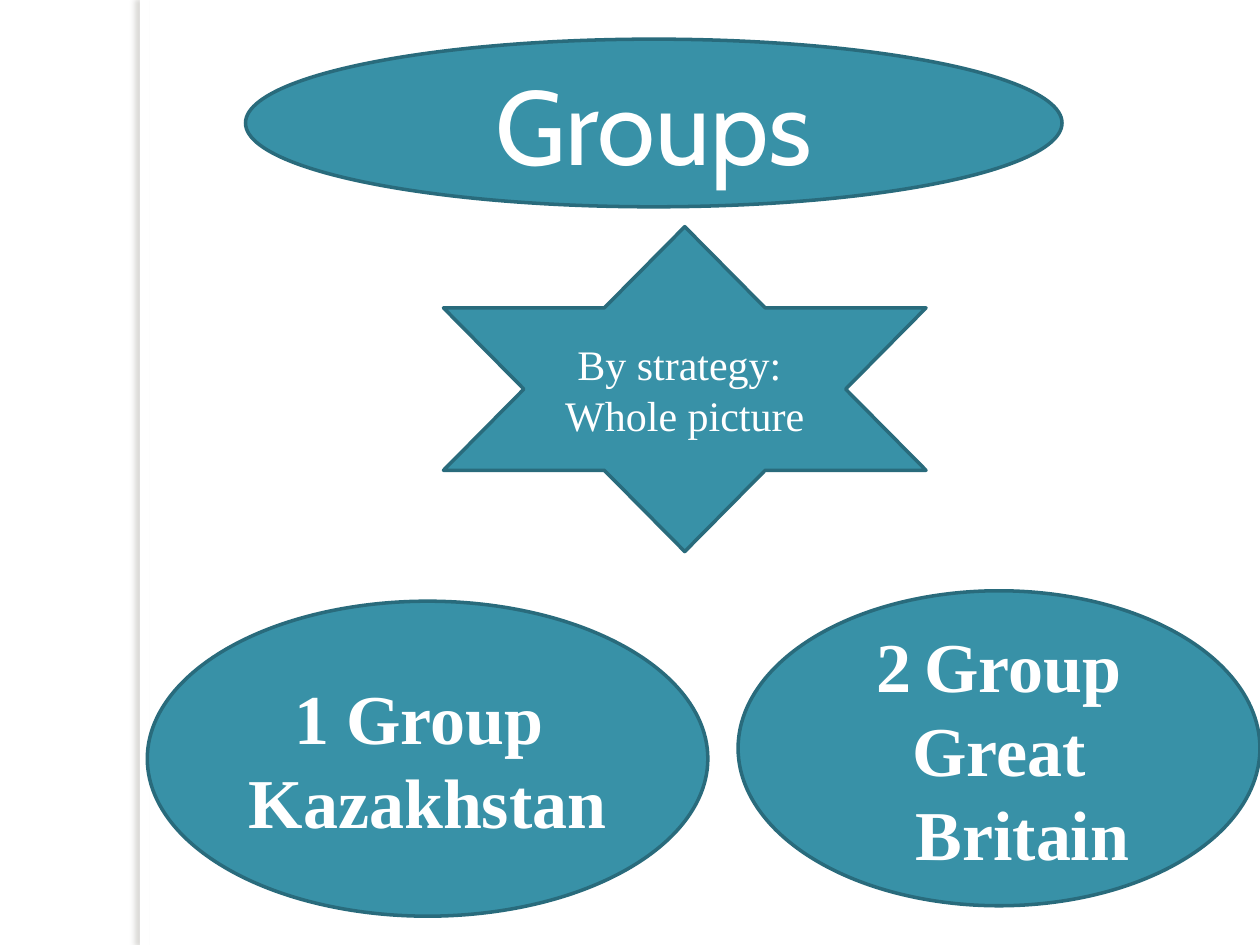
"""Build a slide that splits a class into two groups."""
from dataclasses import dataclass

from lxml.etree import SubElement
from pptx import Presentation
from pptx.dml.color import RGBColor
from pptx.enum.shapes import MSO_SHAPE
from pptx.enum.text import MSO_ANCHOR, MSO_AUTO_SIZE, PP_ALIGN
from pptx.oxml.ns import qn
from pptx.slide import Slide
from pptx.util import Cm, Pt

WHITE = RGBColor(0xFF, 0xFF, 0xFF)
TEAL = RGBColor(0x38, 0x91, 0xA7)
EDGE = RGBColor(0x29, 0x6B, 0x7C)
SHADE = RGBColor(0x73, 0x6F, 0x63)
SERIF = "Times New Roman"
OVAL = MSO_SHAPE.OVAL


@dataclass
class Box:
    left: float
    top: float
    width: float
    height: float

    def place(self) -> tuple:
        return Cm(self.left), Cm(self.top), Cm(self.width), Cm(self.height)


@dataclass
class Label:
    kind: MSO_SHAPE
    box: Box
    lines: list[str]
    size: int
    bold: bool = False
    start: int = 0


TITLE = Box(4.95, 0.79, 16.46, 3.38)
LABELS = [
    Label(OVAL, Box(2.97, 12.12, 11.3, 6.35), ["1 Group ", "Kazakhstan"], 40, True),
    Label(OVAL, Box(14.88, 11.91, 10.52, 6.35), ["Group", "Great Britain"], 40, True, 2),
    Label(MSO_SHAPE.STAR_6_POINT, Box(8.94, 4.57, 9.73, 6.55),
          ["By strategy: ", "Whole picture"], 24),
]


def write(shape, lines: list[str], *, size: int, font: str = SERIF,
          bold: bool = False, start: int = 0) -> None:
    frame = shape.text_frame
    frame.word_wrap = True
    frame.auto_size = MSO_AUTO_SIZE.NONE
    frame.vertical_anchor = MSO_ANCHOR.MIDDLE
    frame.text = "\n".join(lines)
    for para in frame.paragraphs:
        para.alignment = PP_ALIGN.CENTER
        style = para.runs[0].font
        style.name, style.size, style.bold = font, Pt(size), bold
        style.color.rgb = WHITE
        if start:
            props = para._p.get_or_add_pPr()
            props.set("marL", str(Cm(0.95)))
            props.set("indent", str(Cm(-0.95)))
    if start:
        SubElement(frame.paragraphs[0]._p.get_or_add_pPr(), qn("a:buAutoNum"),
                   type="arabicPlain", startAt=str(start))


def draw(slide: Slide, kind: MSO_SHAPE, box: Box):
    shape = slide.shapes.add_shape(kind, *box.place())
    shape.shadow.inherit = False
    shape.fill.solid()
    shape.fill.fore_color.rgb = TEAL
    shape.line.color.rgb = EDGE
    shape.line.width = Pt(2)
    return shape


def draw_strip(slide: Slide) -> None:
    strip = draw(slide, MSO_SHAPE.RECTANGLE, Box(2.82, 0, 0.2, 19.05))
    strip.fill.fore_color.rgb = WHITE
    strip.line.fill.background()
    glow = SubElement(strip._element.spPr.find(qn("a:effectLst")), qn("a:outerShdw"),
                      blurRad=str(Pt(3)), dist=str(Pt(3)), dir="10800000",
                      algn="tl", rotWithShape="0")
    tint = SubElement(glow, qn("a:srgbClr"), val=str(SHADE))
    SubElement(tint, qn("a:alpha"), val="25000")


def draw_title(slide: Slide, text: str) -> None:
    oval = draw(slide, OVAL, TITLE)
    title = slide.shapes.title
    title.left, title.top, title.width, title.height = TITLE.place()
    write(title, [text], size=60, font="Cabin")
    oval._element.addnext(title._element)


def main() -> None:
    deck = Presentation()
    deck.slide_width, deck.slide_height = Cm(25.4), Cm(19.05)
    slide = deck.slides.add_slide(deck.slide_layouts[5])
    draw_strip(slide)
    draw_title(slide, "Groups")
    for label in LABELS:
        shape = draw(slide, label.kind, label.box)
        write(shape, label.lines, size=label.size, bold=label.bold, start=label.start)
    deck.save("out.pptx")


if __name__ == "__main__":
    main()
